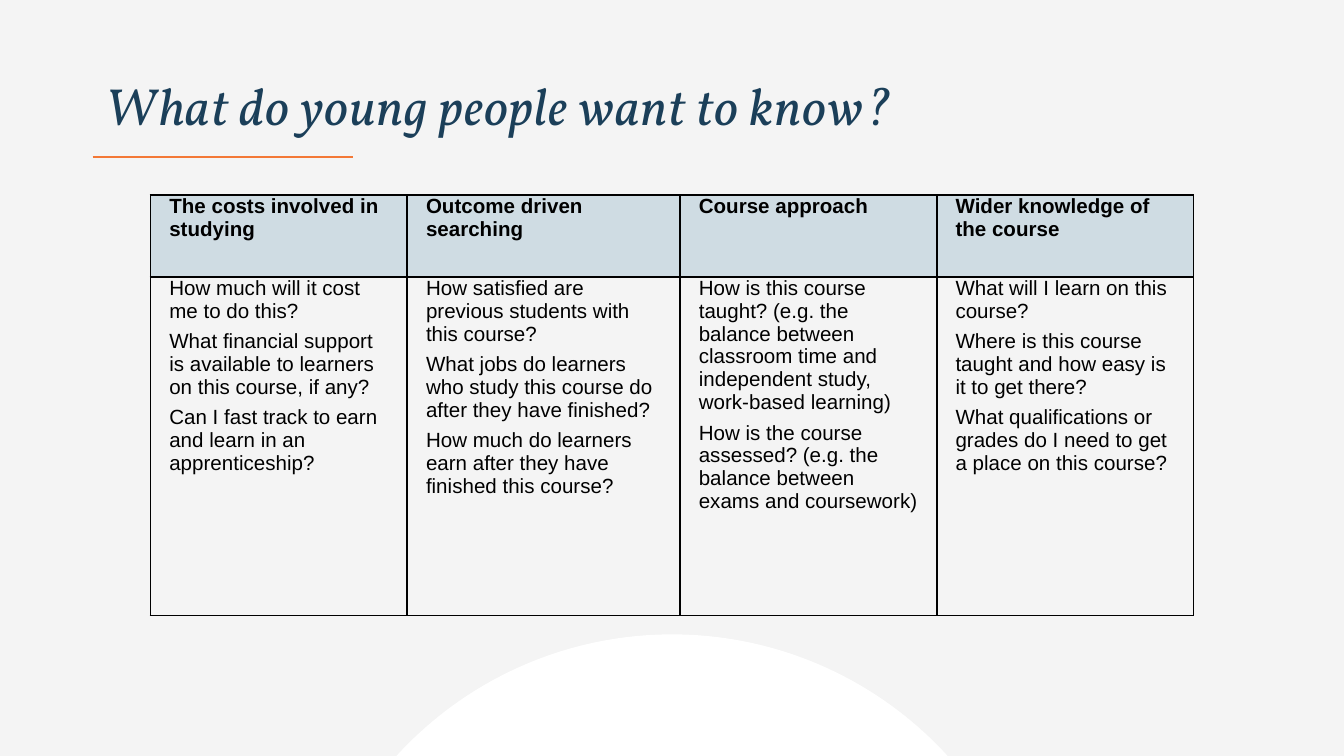
from typing import NamedTuple, Optional

from lxml.etree import SubElement
from pptx import Presentation
from pptx.dml.color import RGBColor
from pptx.enum.shapes import MSO_CONNECTOR, MSO_SHAPE
from pptx.enum.text import MSO_ANCHOR
from pptx.oxml.ns import qn
from pptx.util import Inches, Pt

SLIDE_WIDTH = Inches(10)
SLIDE_HEIGHT = SLIDE_WIDTH * 9 // 16
MARGIN = Inches(0.69)

PAPER = RGBColor(0xF4, 0xF4, 0xF4)
WHITE = RGBColor(0xFF, 0xFF, 0xFF)
BLACK = RGBColor(0x00, 0x00, 0x00)
NAVY = RGBColor(0x1B, 0x3F, 0x59)
ORANGE = RGBColor(0xF3, 0x78, 0x36)
PALE_BLUE = RGBColor(0xCF, 0xDC, 0xE3)


class Topic(NamedTuple):
    heading: str
    questions: list[str]
    width: float = 1.91


TOPICS = [
    Topic("The costs involved in studying", [
        "How much will it cost me to do this?",
        "What financial support is available to learners on this course, if any?",
        "Can I fast track to earn and learn in an apprenticeship?",
    ]),
    Topic("Outcome driven searching", [
        "How satisfied are previous students with this course?",
        "What jobs do learners who study this course do after they have finished?",
        "How much do learners earn after they have finished this course?",
    ], width=2.03),
    Topic("Course approach", [
        "How is this course taught? (e.g. the balance between classroom time "
        "and independent study, work-based learning)",
        "How is the course assessed? (e.g. the balance between exams and coursework)",
    ]),
    Topic("Wider knowledge of the course", [
        "What will I learn on this course?",
        "Where is this course taught and how easy is it to get there?",
        "What qualifications or grades do I need to get a place on this course?",
    ]),
]
ROW_HEIGHTS = [0.61, 2.52]


def write(frame, paragraphs: list[str], *, font: str = "Arial", size: float = 11,
          color: RGBColor = BLACK, bold: bool = False, italic: bool = False,
          after: float = 0, line_spacing: Optional[float] = None,
          indent: float = 0, tracking: float = 0) -> None:
    frame.word_wrap = True
    for index, text in enumerate(paragraphs):
        paragraph = frame.paragraphs[0] if index == 0 else frame.add_paragraph()
        paragraph.space_after = Pt(after)
        paragraph.line_spacing = line_spacing
        properties = paragraph._p.get_or_add_pPr()
        properties.set("marL", str(Inches(indent)))
        properties.set("marR", str(Inches(indent)))
        properties.set("indent", "0")
        run = paragraph.add_run()
        run.text = text
        run.font.name = font
        run.font.size = Pt(size)
        run.font.bold = bold
        run.font.italic = italic
        run.font.color.rgb = color
        if tracking:
            run._r.get_or_add_rPr().set("spc", str(round(tracking * 100)))


def draw_border(cell, color: RGBColor, width: float) -> None:
    properties = cell._tc.get_or_add_tcPr()
    for side in ("a:lnL", "a:lnR", "a:lnT", "a:lnB"):
        edge = SubElement(properties, qn(side), w=str(Pt(width)))
        SubElement(SubElement(edge, qn("a:solidFill")), qn("a:srgbClr"), val=str(color))


def fill_cell(cell, paragraphs: list[str], *, fill: Optional[RGBColor] = None,
              bold: bool = False) -> None:
    cell.margin_left = cell.margin_right = Inches(0.06)
    cell.margin_top = cell.margin_bottom = 0
    draw_border(cell, BLACK, 1)
    if fill is None:
        cell.fill.background()
    else:
        cell.fill.solid()
        cell.fill.fore_color.rgb = fill
    write(cell.text_frame, paragraphs, bold=bold, after=4, indent=0.08)


def draw_backdrop(slide) -> None:
    slide.background.fill.solid()
    slide.background.fill.fore_color.rgb = PAPER
    rule_y = Inches(1.17)
    rule = slide.shapes.add_connector(
        MSO_CONNECTOR.STRAIGHT, MARGIN, rule_y, Inches(2.63), rule_y)
    rule.line.color.rgb = ORANGE
    rule.line.width = Pt(1.25)
    SubElement(rule._element.spPr, qn("a:effectLst"))

    diameter = Inches(5.55)
    dome = slide.shapes.add_shape(
        MSO_SHAPE.OVAL, (SLIDE_WIDTH - diameter) // 2, Inches(4.72), diameter, diameter)
    dome.shadow.inherit = False
    dome.fill.solid()
    dome.fill.fore_color.rgb = WHITE
    dome.line.fill.background()


def draw_title(slide, text: str) -> None:
    title = slide.shapes.add_textbox(
        MARGIN, Inches(0.06), SLIDE_WIDTH - 2 * MARGIN, Inches(1.01)).text_frame
    title.vertical_anchor = MSO_ANCHOR.BOTTOM
    write(title, [text], font="Vollkorn", size=28, color=NAVY, italic=True,
          line_spacing=0.9, tracking=0.5)


def draw_topics(slide, topics: list[Topic]) -> None:
    width = Inches(sum(topic.width for topic in topics))
    table = slide.shapes.add_table(
        len(ROW_HEIGHTS), len(topics), (SLIDE_WIDTH - width) // 2, Inches(1.45),
        width, Inches(sum(ROW_HEIGHTS))).table
    table.first_row = table.horz_banding = False
    for row, height in zip(table.rows, ROW_HEIGHTS):
        row.height = Inches(height)
    for index, topic in enumerate(topics):
        table.columns[index].width = Inches(topic.width)
        fill_cell(table.cell(0, index), [topic.heading], fill=PALE_BLUE, bold=True)
        fill_cell(table.cell(1, index), topic.questions)


def main() -> None:
    deck = Presentation()
    deck.slide_width = SLIDE_WIDTH
    deck.slide_height = SLIDE_HEIGHT
    slide = deck.slides.add_slide(deck.slide_layouts[6])
    draw_backdrop(slide)
    draw_title(slide, "What do young people want to know?")
    draw_topics(slide, TOPICS)
    deck.save("out.pptx")


if __name__ == "__main__":
    main()
